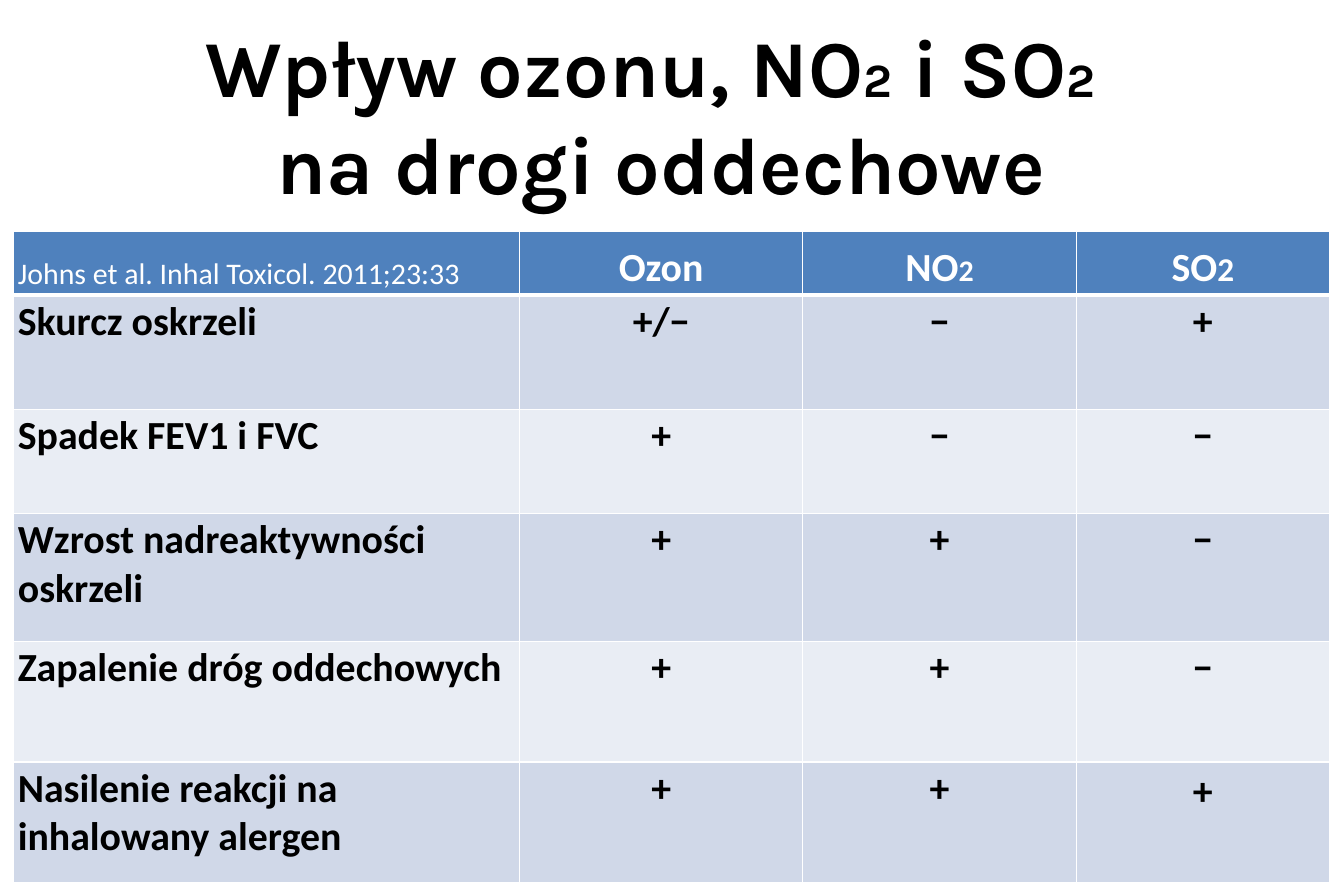
from lxml.etree import SubElement
from pptx import Presentation
from pptx.dml.color import RGBColor
from pptx.enum.text import MSO_ANCHOR as Anchor, PP_ALIGN as Align
from pptx.oxml.ns import qn
from pptx.util import Inches, Pt

BLACK = RGBColor(0x00, 0x00, 0x00)
WHITE = RGBColor(0xFF, 0xFF, 0xFF)
BLUE = RGBColor(0x4F, 0x81, 0xBD)
BANDS = RGBColor(0xD0, 0xD8, 0xE8), RGBColor(0xE9, 0xED, 0xF4)

WIDE, HIGH = 11.25, 7.5
COLS = 4.24, 2.37, 2.29, 2.12
ROWS = 0.53, 0.96, 0.87, 1.07, 1.01, 1.01

TITLE = [
    [("Wpływ ozonu, NO", 48.6), ("2", 28.8), (" i SO", 48.6), ("2", 28.8), (" ", 48.6)],
    [("na drogi oddechowe", 48.6)],
]
HEAD = [
    [("Johns et al. Inhal Toxicol. 2011;23:33", 18)],
    [("Ozon", 24)],
    [("NO", 24), ("2", 18)],
    [("SO", 24), ("2", 20)],
]
BODY = [
    ("Skurcz oskrzeli", "+/−", "−", "+"),
    ("Spadek FEV1 i FVC", "+", "−", "−"),
    ("Wzrost nadreaktywności oskrzeli", "+", "+", "−"),
    ("Zapalenie dróg oddechowych", "+", "+", "−"),
    ("Nasilenie reakcji na inhalowany alergen", "+", "+", "+"),
]


def add_runs(para, parts, face, color, bold=True):
    for text, size in parts:
        run = para.add_run()
        run.text = text
        font = run.font
        font.name, font.size, font.bold = face, Pt(size), bold
        font.color.rgb = color


def add_title(slide, left, top, width, height):
    box = slide.shapes.add_textbox(*map(Inches, (left, top, width, height)))
    frame = box.text_frame
    frame.word_wrap = True
    frame.vertical_anchor = Anchor.MIDDLE
    para = frame.paragraphs[0]
    para.alignment = Align.CENTER
    for i, line in enumerate(TITLE):
        if i:
            para.add_line_break()
        add_runs(para, line, "Karla", BLACK)


def set_edges(cell, base):
    props = cell._tc.get_or_add_tcPr()
    for i, side in enumerate("LRTB"):
        points = base if side == "B" else 1
        line = SubElement(props, qn("a:ln" + side), w=str(Pt(points)))
        fill = SubElement(line, qn("a:solidFill"))
        SubElement(fill, qn("a:srgbClr"), val=str(WHITE))
        props.insert(i, line)


def fill_cell(cell, parts, row, col):
    head = row == 0
    cell.fill.solid()
    cell.fill.fore_color.rgb = BLUE if head else BANDS[(row - 1) % 2]
    cell.vertical_anchor = Anchor.BOTTOM if head else Anchor.TOP
    # The last cell keeps the default margins
    if (row, col) != (len(ROWS) - 1, len(COLS) - 1):
        cell.margin_left = cell.margin_right = Inches(0.04)
        cell.margin_top = cell.margin_bottom = Inches(0.02)
    para = cell.text_frame.paragraphs[0]
    para.alignment = Align.CENTER if col else Align.LEFT
    add_runs(para, parts, "Calibri", WHITE if head else BLACK, not head or col > 0)
    set_edges(cell, 3 if head else 1)


def add_grid(slide, left, top):
    size = left, top, sum(COLS), sum(ROWS)
    table = slide.shapes.add_table(len(ROWS), len(COLS), *map(Inches, size)).table
    for col, width in zip(table.columns, COLS):
        col.width = Inches(width)
    for row, height in zip(table.rows, ROWS):
        row.height = Inches(height)
    lines = [HEAD] + [[[(text, 24)] for text in line] for line in BODY]
    for i, line in enumerate(lines):
        for j, parts in enumerate(line):
            fill_cell(table.cell(i, j), parts, i, j)


def main():
    deck = Presentation()
    deck.slide_width, deck.slide_height = Inches(WIDE), Inches(HIGH)
    slide = deck.slides.add_slide(deck.slide_layouts[6])
    # Heading
    add_title(slide, 0, 0.05, 11.06, 1.81)
    # Table of effects
    add_grid(slide, 0.11, 1.94)
    deck.save("out.pptx")


if __name__ == "__main__":
    main()
